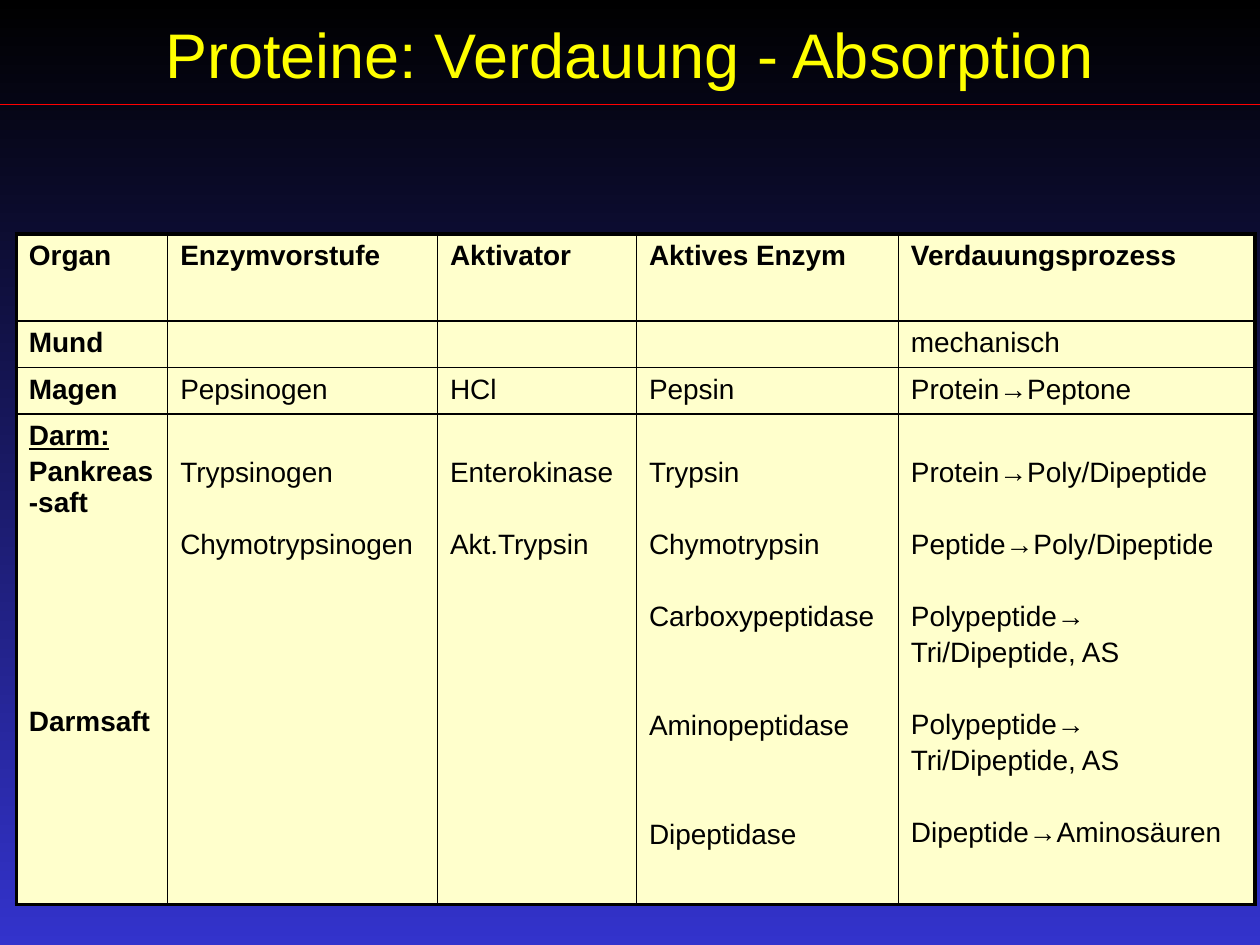
import pptx
import pptx.util
import pptx.dml.color
import pptx.enum.text
import pptx.enum.shapes
import pptx.oxml
from dataclasses import dataclass
from pptx.util import Cm, Pt


@dataclass(frozen=True)
class Theme:
    font: str = "Arial"
    head: int = 36
    body: int = 16
    pitch: float = 20.95   # distance between text lines, in points
    gap: float = 2.55      # space before a paragraph, in points
    top: str = "000000"
    base: str = "3333CC"
    title: str = "FFFF00"
    rule: str = "FF0000"
    cell: str = "FFFFCC"
    ink: str = "000000"
    thin: float = 1
    thick: float = 2.25


THEME = Theme()
COLS = (3.05, 5.44, 4.01, 5.28, 7.19)
ROWS = (1.75, 0.94, 0.94, 9.88)

HEADS = ("Organ", "Enzymvorstufe", "Aktivator", "Aktives Enzym",
         "Verdauungsprozess")
MOUTH = ("Mund", "", "", "", "mechanisch")
STOMACH = ("Magen", "Pepsinogen", "HCl", "Pepsin", "Protein→Peptone")
# Gut cells: line number in the cell -> text
GUT = (
    {0: "Darm:", 1: "Pankreas-saft", 7: "Darmsaft"},
    {1: "Trypsinogen", 3: "Chymotrypsinogen"},
    {1: "Enterokinase", 3: "Akt.Trypsin"},
    {1: "Trypsin", 3: "Chymotrypsin", 5: "Carboxypeptidase",
     8: "Aminopeptidase", 11: "Dipeptidase"},
    {1: "Protein→Poly/Dipeptide", 3: "Peptide→Poly/Dipeptide",
     5: "Polypeptide→", 6: "Tri/Dipeptide, AS",
     8: "Polypeptide→", 9: "Tri/Dipeptide, AS",
     11: "Dipeptide→Aminosäuren"},
)


def rgb(code):
    return pptx.dml.color.RGBColor.from_string(code)


def apply(item, form):
    for name, value in form.items():
        setattr(item, name, value)


def style(run, size, color, **form):
    apply(run.font, {"name": THEME.font, "size": Pt(size), **form})
    run.font.color.rgb = rgb(color)


def paint(slide):
    fill = slide.background.fill
    fill.gradient()
    fill.gradient_angle = 270
    for stop, color in zip(fill.gradient_stops, (THEME.top, THEME.base)):
        stop.color.rgb = rgb(color)


def add_title(slide, text):
    shape = slide.shapes.title
    apply(shape, {"left": Cm(0.69), "top": Cm(0.33),
                  "width": Cm(24), "height": Cm(1.5)})
    frame = shape.text_frame
    apply(frame, {"vertical_anchor": pptx.enum.text.MSO_ANCHOR.MIDDLE,
                  "auto_size": pptx.enum.text.MSO_AUTO_SIZE.NONE,
                  "margin_top": 0, "margin_bottom": 0})
    para = frame.paragraphs[0]
    para.alignment = pptx.enum.text.PP_ALIGN.CENTER
    run = para.add_run()
    run.text = text
    style(run, THEME.head, THEME.title)


def add_rule(slide, y, width):
    kind = pptx.enum.shapes.MSO_CONNECTOR.STRAIGHT
    line = slide.shapes.add_connector(kind, 0, y, width, y)
    line.line.color.rgb = rgb(THEME.rule)
    line.line.width = Pt(0.75)
    props = line._element.spPr
    props.append(props.makeelement(pptx.oxml.ns.qn("a:effectLst"), {}))


def add_edge(cell, side, width):
    space = pptx.oxml.ns.nsdecls("a")
    cell._tc.get_or_add_tcPr().append(pptx.oxml.parse_xml(
        f'<a:ln{side} {space} w="{Pt(width)}"><a:solidFill>'
        f'<a:srgbClr val="{THEME.ink}"/></a:solidFill></a:ln{side}>'))


def write(cell, lines, bold):
    """Place each text on its numbered line by paragraph spacing."""
    frame = cell.text_frame
    last = None
    for num, text in lines.items():
        if last is None:
            para = frame.paragraphs[0]
            cell.margin_top = Cm(0.13) + Pt(num * THEME.pitch)
        else:
            para = frame.add_paragraph()
            skip = num - last - 1
            # The organ name wraps onto a line of its own, without a gap
            para.space_before = Pt(THEME.gap + skip * THEME.pitch)
        run = para.add_run()
        run.text = text
        style(run, THEME.body, THEME.ink, bold=bold,
              underline=text == "Darm:")
        last = num


def add_grid(slide):
    rows = [[{0: text} if text else {} for text in row]
            for row in (HEADS, MOUTH, STOMACH)] + [GUT]
    frame = slide.shapes.add_table(len(ROWS), len(COLS), Cm(0.33), Cm(4.72),
                                   Cm(sum(COLS)), Cm(sum(ROWS)))
    table = frame.table
    apply(table, {"first_row": False, "horz_banding": False})
    for col, width in zip(table.columns, COLS):
        col.width = Cm(width)
    for row, height in zip(table.rows, ROWS):
        row.height = Cm(height)
    for r, row in enumerate(rows):
        for c, lines in enumerate(row):
            cell = table.cell(r, c)
            outer = {"L": c == 0, "R": c == len(COLS) - 1,
                     "T": r == 0, "B": r == len(ROWS) - 1}
            for side, edge in outer.items():
                add_edge(cell, side, THEME.thick if edge else THEME.thin)
            cell.fill.solid()
            cell.fill.fore_color.rgb = rgb(THEME.cell)
            if lines:
                write(cell, lines, bold=r == 0 or c == 0)
            else:
                apply(cell, {"margin_top": 0, "margin_bottom": 0})


def main():
    deck = pptx.Presentation()
    apply(deck, {"slide_width": Cm(25.4), "slide_height": Cm(19.05)})
    slide = deck.slides.add_slide(deck.slide_layouts[5])
    # Background and heading
    paint(slide)
    add_title(slide, "Proteine: Verdauung - Absorption")
    add_rule(slide, Cm(2.11), deck.slide_width)
    # Digestion table
    add_grid(slide)
    deck.save("out.pptx")


if __name__ == "__main__":
    main()
